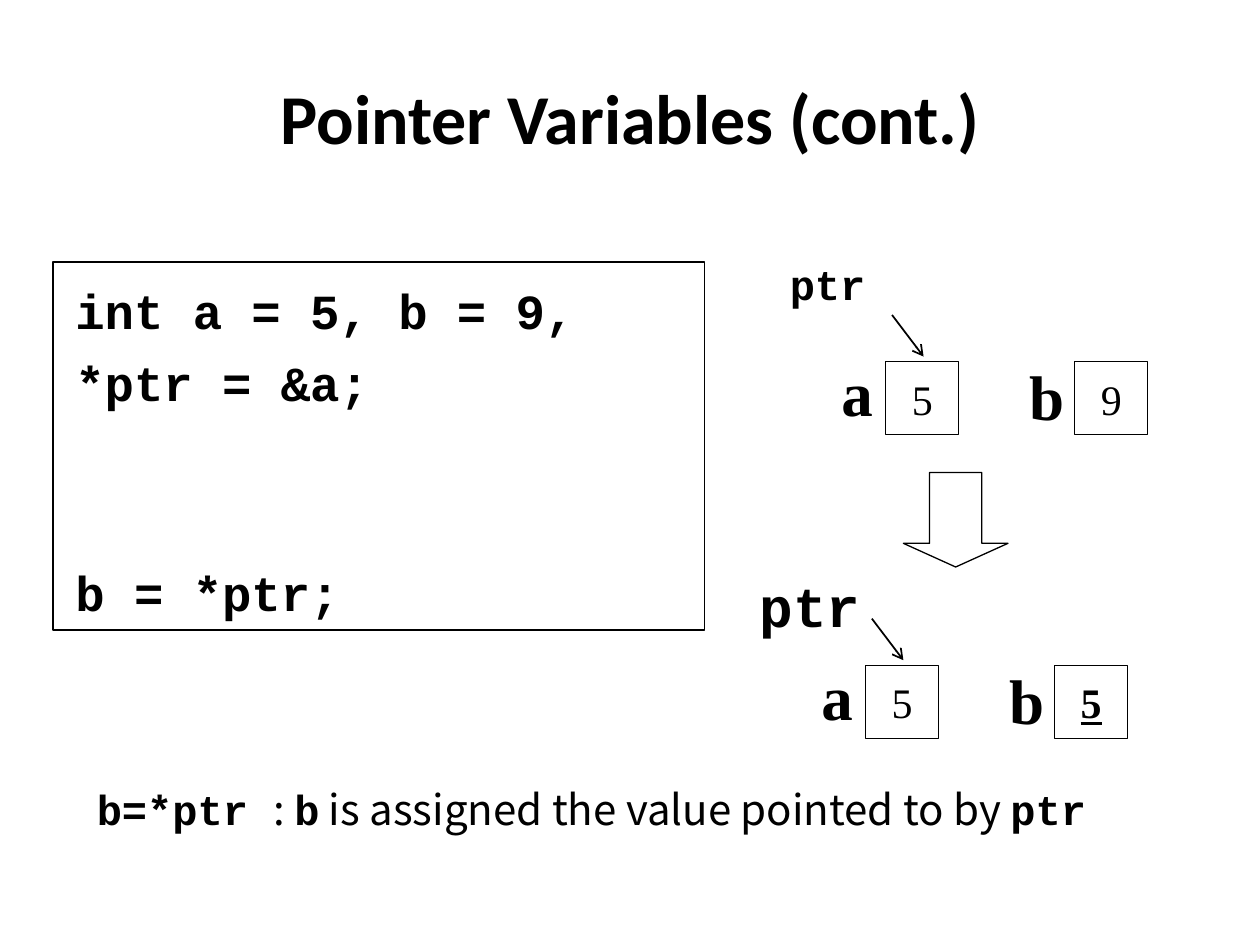
from dataclasses import dataclass

from lxml import etree
from pptx import Presentation
from pptx import util as u
from pptx.dml.color import RGBColor
from pptx.enum import shapes, text
from pptx.oxml.ns import qn

BLACK = "000000"
CODE_FONT = "Courier New"
BODY_FONT = "Noto Sans CJK KR"
LABEL_FONT = "Times New Roman"


@dataclass
class Style:
    font: str
    size: float
    bold: bool = True
    underline: bool = False


@dataclass
class MemoryState:
    left: float
    top: float
    pointer_box: tuple[float, float, float, float]
    pointer_size: float
    b_value: str
    b_changed: bool


def color(hex_value: str) -> RGBColor:
    return RGBColor.from_string(hex_value)


def apply_style(font, style: Style) -> None:
    font.name = style.font
    font.size = u.Pt(style.size)
    font.bold = style.bold
    font.underline = style.underline
    font.color.rgb = color(BLACK)


def add_text(slide, box, lines: list[str], style: Style, wrap: bool = True):
    shape = slide.shapes.add_textbox(*map(u.Inches, box))
    frame = shape.text_frame
    frame.word_wrap = wrap
    frame.text = "\n".join(lines)
    for paragraph in frame.paragraphs:
        apply_style(paragraph.font, style)
    return shape


def add_outline(slide, kind, box):
    shape = slide.shapes.add_shape(kind, *map(u.Inches, box))
    shape.shadow.inherit = False
    shape.fill.background()
    shape.line.color.rgb = color(BLACK)
    shape.line.width = u.Pt(0.75)
    return shape


def add_cell(slide, left: float, top: float, value: str, style: Style) -> None:
    shape = add_outline(slide, shapes.MSO_SHAPE.RECTANGLE, (left, top, 0.58, 0.58))
    frame = shape.text_frame
    frame.word_wrap = False
    frame.vertical_anchor = text.MSO_ANCHOR.MIDDLE
    frame.text = value
    paragraph = frame.paragraphs[0]
    paragraph.alignment = text.PP_ALIGN.CENTER
    apply_style(paragraph.font, style)


def add_arrow(slide, start_x: float, start_y: float, end_x: float, end_y: float) -> None:
    points = map(u.Inches, (start_x, start_y, end_x, end_y))
    connector = slide.shapes.add_connector(shapes.MSO_CONNECTOR.STRAIGHT, *points)
    connector.line.color.rgb = color(BLACK)
    connector.line.width = u.Pt(1)
    etree.SubElement(connector.line._get_or_add_ln(), qn("a:tailEnd"), type="arrow")
    etree.SubElement(connector._element.spPr, qn("a:effectLst"))


def add_memory_state(slide, state: MemoryState) -> None:
    left, top = state.left, state.top
    label = Style(LABEL_FONT, 36)
    changed = state.b_changed
    add_cell(slide, left, top, "5", Style(LABEL_FONT, 24, bold=False))
    add_cell(slide, left + 1.5, top, state.b_value, Style(LABEL_FONT, 24, changed, changed))
    add_text(slide, (left - 0.45, top - 0.11, 0.45, 0.7), ["a"], label, wrap=False)
    add_text(slide, (left + 1.04, top - 0.08, 0.48, 0.7), ["b"], label, wrap=False)
    add_text(slide, state.pointer_box, ["ptr"], Style(CODE_FONT, state.pointer_size), wrap=False)
    add_arrow(slide, left + 0.05, top - 0.37, left + 0.3, top - 0.04)


def add_title(slide) -> None:
    shape = add_text(slide, (0.5, 0.3, 9, 1.25), ["Pointer Variables (cont.)"], Style("Calibri", 40))
    shape.text_frame.vertical_anchor = text.MSO_ANCHOR.MIDDLE
    shape.text_frame.paragraphs[0].alignment = text.PP_ALIGN.CENTER


def add_code(slide) -> None:
    add_outline(slide, shapes.MSO_SHAPE.RECTANGLE, (0.42, 2.08, 5.17, 2.92))
    lines = ["int a = 5, b = 9,", "*ptr = &a;", "b = *ptr;"]
    shape = add_text(slide, (0.5, 2.1, 5.25, 2.81), lines, Style(CODE_FONT, 28))
    shape.text_frame.margin_top = u.Inches(0.13)
    for paragraph, space in zip(shape.text_frame.paragraphs, (0, 7.5, 86)):
        paragraph.space_before = u.Pt(space)


def add_explanation(slide) -> None:
    code = Style(CODE_FONT, 24)
    body = Style(BODY_FONT, 24, bold=False)
    shape = slide.shapes.add_textbox(*map(u.Inches, (0.67, 6.17, 8.43, 0.5)))
    shape.text_frame.word_wrap = True
    paragraph = shape.text_frame.paragraphs[0]
    for words, style in (
        ("b=*ptr ", code),
        (": ", body),
        ("b", code),
        (" is assigned the value pointed to by ", body),
        ("ptr", code),
    ):
        run = paragraph.add_run()
        run.text = words
        apply_style(run.font, style)


def main() -> None:
    presentation = Presentation()
    presentation.slide_width = u.Inches(10)
    presentation.slide_height = u.Inches(7.5)
    slide = presentation.slides.add_slide(presentation.slide_layouts[6])

    add_title(slide)
    add_code(slide)
    for state in (
        MemoryState(7.03, 2.87, (6.17, 2, 0.87, 0.5), 24, "9", False),
        MemoryState(6.87, 5.28, (5.93, 4.49, 1, 0.63), 32, "5", True),
    ):
        add_memory_state(slide, state)
    down_arrow = add_outline(slide, shapes.MSO_SHAPE.DOWN_ARROW, (7.17, 3.75, 0.83, 0.75))
    down_arrow.adjustments[0] = 0.5
    down_arrow.adjustments[1] = 0.25
    add_explanation(slide)

    presentation.save("out.pptx")


if __name__ == "__main__":
    main()
